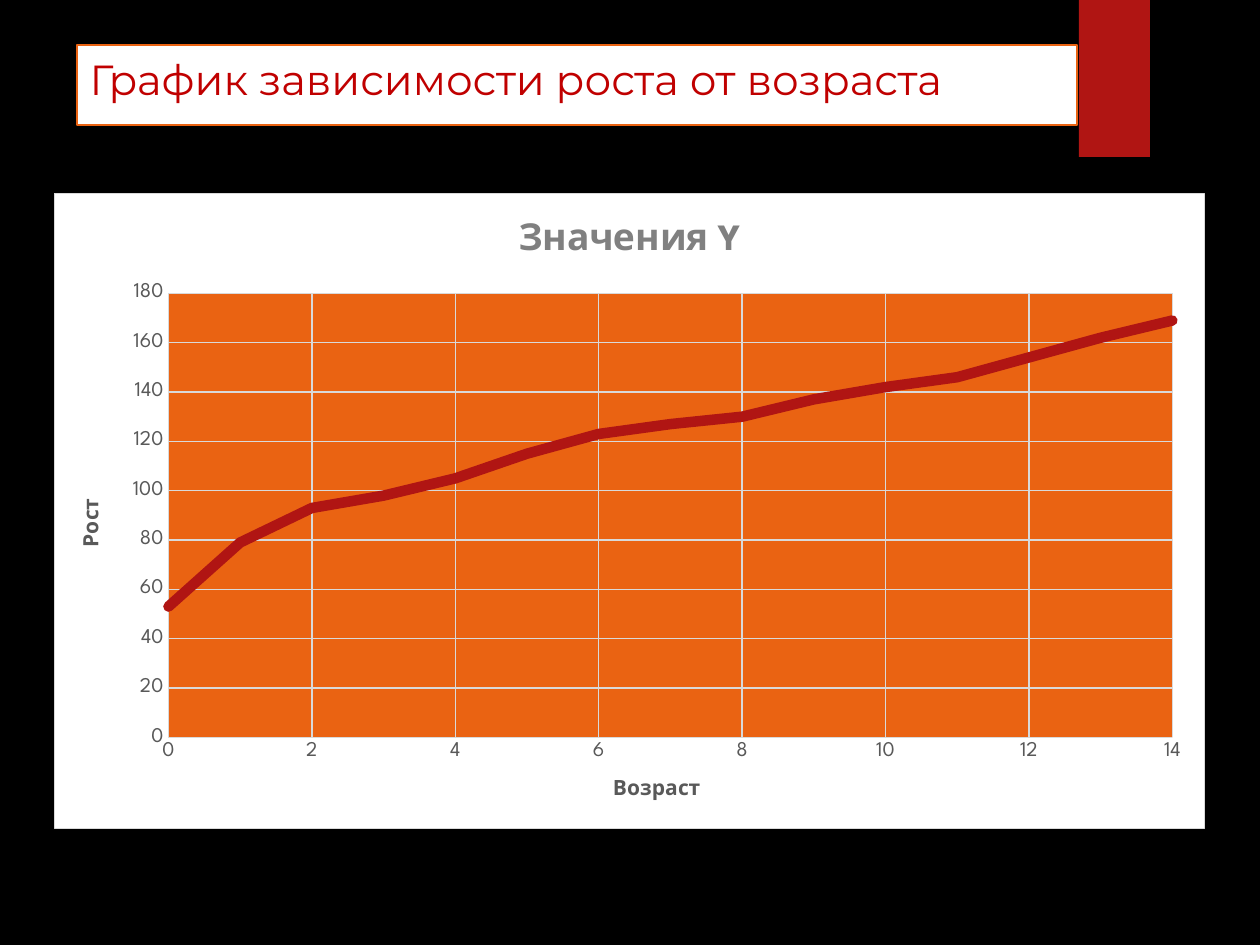
from lxml.etree import fromstring
from pptx import Presentation
from pptx.chart.data import XyChartData
from pptx.dml.color import RGBColor
from pptx.enum.chart import XL_CHART_TYPE as ChartType, XL_TICK_MARK as TickMark
from pptx.enum.shapes import MSO_SHAPE as Shape
from pptx.enum.text import MSO_ANCHOR as Anchor, MSO_AUTO_SIZE as AutoSize, PP_ALIGN as Align
from pptx.oxml.ns import nsdecls, qn
from pptx.util import Emu, Inches, Pt

PX_PER_INCH = 126
ORANGE, RED, GRID, GRAY = "EA6312", "B01513", "D9D9D9", "595959"
CHART_FONT = "League Spartan"
HEIGHTS = [53, 79, 93, 98, 105, 115, 123, 127, 130, 137, 142, 146, 154, 162, 169]


def px(length):
    return Emu(round(length * Inches(1) / PX_PER_INCH))


def color(value):
    return RGBColor.from_string(value)


def set_line(line, value, width):
    line.color.rgb = color(value)
    line.width = Pt(width)


def set_font(font, name, size, value, bold=False):
    font.name, font.size, font.bold = name, Pt(size), bold
    font.color.rgb = color(value)


def add_ribbon(slide, box):
    ribbon = slide.shapes.add_shape(Shape.RECTANGLE, *map(px, box))
    ribbon.shadow.inherit = False
    ribbon.fill.solid()
    ribbon.fill.fore_color.rgb = color(RED)
    ribbon.line.fill.background()


def place_title(slide, box, text):
    title = slide.shapes.title
    title.left, title.top, title.width, title.height = map(px, box)
    title.fill.solid()
    title.fill.fore_color.rgb = color("FFFFFF")
    set_line(title.line, ORANGE, 1.5)
    frame = title.text_frame
    frame.text = text
    frame.word_wrap = True
    frame.auto_size = AutoSize.NONE
    frame.vertical_anchor = Anchor.TOP
    frame.margin_top = px(9)
    paragraph = frame.paragraphs[0]
    paragraph.alignment = Align.LEFT
    set_font(paragraph.runs[0].font, "Montserrat", 24, "C00000")


def area_format(fill, border=None):
    line = (f'<a:ln w="9525"><a:solidFill><a:srgbClr val="{border}"/></a:solidFill></a:ln>'
            if border else "<a:ln><a:noFill/></a:ln>")
    return fromstring(f'<c:spPr {nsdecls("c", "a")}><a:solidFill><a:srgbClr val="{fill}"/>'
                      f'</a:solidFill>{line}</c:spPr>')


def plot_layout(box, plot_box):
    left, top, width, height = box
    parts = {"x": (plot_box[0] - left) / width, "y": (plot_box[1] - top) / height,
             "w": plot_box[2] / width, "h": plot_box[3] / height}
    values = "".join(f'<c:{name} val="{part:.4f}"/>' for name, part in parts.items())
    return fromstring(f'<c:layout {nsdecls("c")}><c:manualLayout><c:layoutTarget val="inner"/>'
                      f'<c:xMode val="edge"/><c:yMode val="edge"/>{values}'
                      '</c:manualLayout></c:layout>')


def format_title(text_frame, text, size, value):
    text_frame.text = text
    set_font(text_frame.paragraphs[0].runs[0].font, CHART_FONT, size, value, bold=True)


def format_axis(axis, text, maximum, step):
    axis.minimum_scale, axis.maximum_scale, axis.major_unit = 0, maximum, step
    axis.major_tick_mark = axis.minor_tick_mark = TickMark.NONE
    axis.has_major_gridlines = True
    set_line(axis.major_gridlines.format.line, GRID, 0.75)
    set_line(axis.format.line, GRID, 0.75)
    set_font(axis.tick_labels.font, CHART_FONT, 12, GRAY)
    format_title(axis.axis_title.text_frame, text, 12, GRAY)


def add_growth_chart(slide, box, plot_box):
    data = XyChartData()
    points = data.add_series("Значения Y")
    for age, height in enumerate(HEIGHTS):
        points.add_data_point(age, height)
    chart = slide.shapes.add_chart(ChartType.XY_SCATTER_LINES_NO_MARKERS,
                                   *map(px, box), data).chart
    set_font(chart.font, CHART_FONT, 10, GRAY)
    chart.has_legend = False
    chart.has_title = True
    format_title(chart.chart_title.text_frame, "Значения Y", 21.3, "808080")
    format_axis(chart.category_axis, "Возраст", 14, 2)
    format_axis(chart.value_axis, "Рост", 180, 20)

    # Thick growth line with round ends
    plot = chart.plots[0]
    plot.vary_by_categories = False
    series = plot.series[0]
    series.smooth = False
    set_line(series.format.line, RED, 6)
    series._element.find(qn("c:spPr")).find(qn("a:ln")).set("cap", "rnd")

    # Chart and plot backgrounds, and the plot position
    chart_part = chart._chartSpace.find(qn("c:chart"))
    chart_part.addnext(area_format("FFFFFF", GRID))
    plot_area = chart_part.find(qn("c:plotArea"))
    for layout in plot_area.findall(qn("c:layout")):
        plot_area.remove(layout)
    plot_area.insert(0, plot_layout(box, plot_box))
    plot_area.append(area_format(ORANGE))


def main():
    presentation = Presentation()
    presentation.slide_width, presentation.slide_height = px(1260), px(945)
    slide = presentation.slides.add_slide(presentation.slide_layouts[5])
    slide.background.fill.solid()
    slide.background.fill.fore_color.rgb = color("000000")
    add_ribbon(slide, (1079, 0, 71, 157))
    place_title(slide, (77, 45, 1000, 80), "График зависимости роста от возраста")
    add_growth_chart(slide, (54, 193, 1151, 636), (168, 293, 1005, 445))
    presentation.save("out.pptx")


if __name__ == "__main__":
    main()
